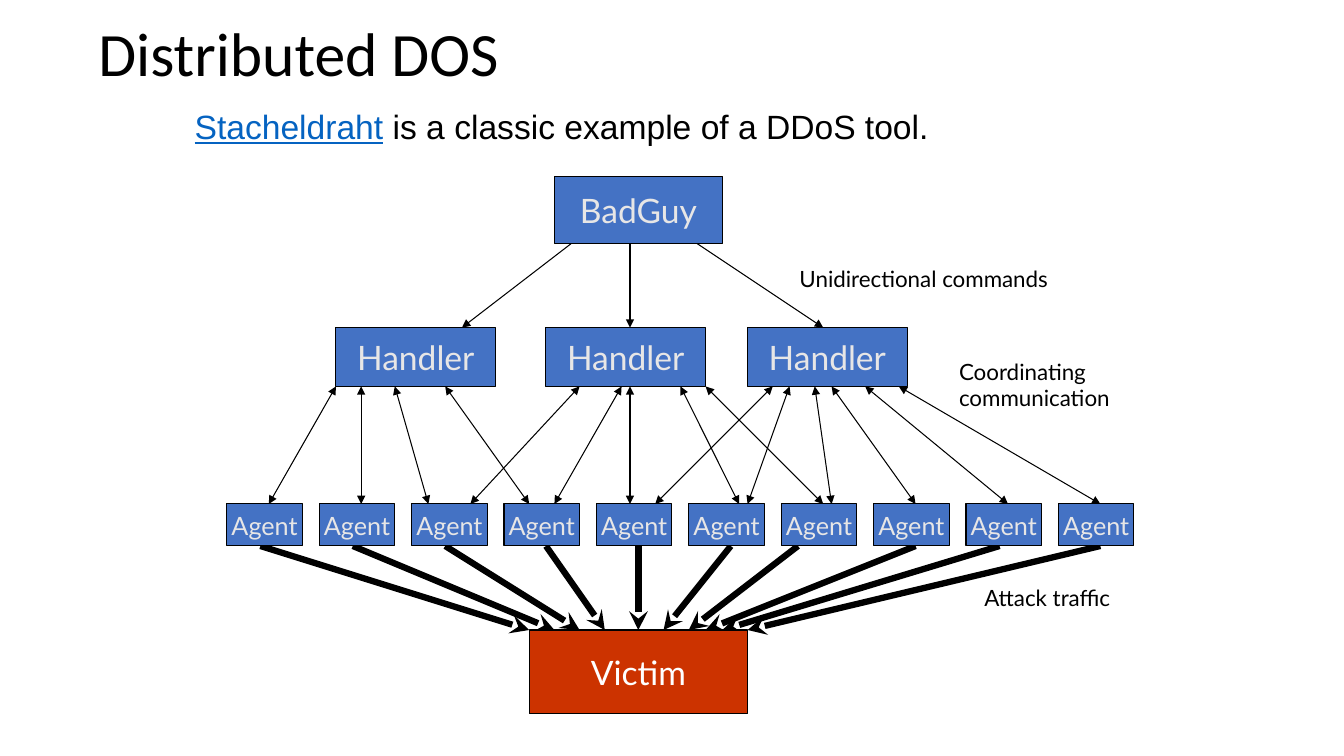
from lxml import etree
from pptx import Presentation
from pptx.dml.color import RGBColor
from pptx.enum.shapes import MSO_CONNECTOR, MSO_SHAPE
from pptx.enum.text import MSO_ANCHOR as ANCHOR, PP_ALIGN as ALIGN
from pptx.oxml.ns import qn
from pptx.util import Cm, Pt

COLORS = {"black": "000000", "blue": "4472C4", "red": "CC3300",
          "pale": "E7E6E6", "white": "FFFFFF", "link": "0563C1"}

# Grid positions
BADGUY = (66, 21, 20, 8)
VICTIM = (63, 75, 26, 10)
HANDLER_LEFTS, HANDLER_TOP, HANDLER_W, HANDLER_H = (40, 65, 89), 39, 19, 7
AGENT_LEFT, AGENT_STEP, AGENT_TOP, AGENT_W, AGENT_H = 27, 11, 60, 9, 5
AGENT_COUNT = 10

# (x at the upper row, x at the lower row)
COMMANDS = [(68, 55), (75, 75), (83, 98)]
COORDINATION = [(40, 32), (43, 43), (47, 51), (53, 63), (69, 56),
                (74, 66), (75, 75), (81, 88), (84, 98), (92, 78),
                (94, 89), (97, 99), (99, 109), (103, 120), (107, 131)]
ATTACKS = [(31, 63), (42, 66), (53, 69), (65, 72), (76, 76),
           (87, 79), (95, 82), (109, 84), (119, 86), (131, 89)]
LABELS = [("Unidirectional commands", (94, 31, 37, 4.4)),
          ("Coordinating communication", (113, 42, 25, 7.7)),
          ("Attack traffic", (116, 69, 19, 4.4))]


def grid(n):
    """Length of n grid steps, twelve to the inch."""
    return Cm(n * 2.54 / 12)


def rgb(name):
    return RGBColor.from_string(COLORS[name])


def add_run(p, text, size, font, color, underline=None):
    r = p.add_run()
    r.text = text
    r.font.size = Pt(size)
    r.font.name = font
    r.font.color.rgb = rgb(color)
    r.font.underline = underline


def add_title(s, text):
    sp = s.shapes.title
    sp.left, sp.top, sp.width, sp.height = map(grid, (10.5, 1.5, 108, 10.5))
    tf = sp.text_frame
    tf.vertical_anchor = ANCHOR.MIDDLE
    p = tf.paragraphs[0]
    p.alignment = ALIGN.LEFT
    p.line_spacing = 0.9
    add_run(p, text, 44, "Calibri", "black")


def add_text(s, box):
    """Add a wrapping text box and return its first paragraph."""
    tf = s.shapes.add_textbox(*map(grid, box)).text_frame
    tf.word_wrap = True
    return tf.paragraphs[0]


def add_node(s, text, box, size=24, fill="blue", color="pale"):
    sp = s.shapes.add_shape(MSO_SHAPE.RECTANGLE, *map(grid, box))
    sp.shadow.inherit = False
    sp.fill.solid()
    sp.fill.fore_color.rgb = rgb(fill)
    sp.line.color.rgb = rgb("black")
    sp.line.width = Pt(0.75)
    tf = sp.text_frame
    tf.word_wrap = False
    tf.vertical_anchor = ANCHOR.MIDDLE
    p = tf.paragraphs[0]
    p.alignment = ALIGN.CENTER
    add_run(p, text, size, "Lato", color)


def add_arrows(s, links, top, bottom, width=0.75, head=None, tail="triangle"):
    """Draw one arrow per link, from the row at top to the row at bottom."""
    for x1, x2 in links:
        c = s.shapes.add_connector(MSO_CONNECTOR.STRAIGHT,
                                   *map(grid, (x1, top, x2, bottom)))
        c.line.color.rgb = rgb("black")
        c.line.width = Pt(width)
        ln = c.line._get_or_add_ln()
        for tag, kind in (("a:headEnd", head), ("a:tailEnd", tail)):
            if kind:
                etree.SubElement(ln, qn(tag), type=kind)
        etree.SubElement(c._element.spPr, qn("a:effectLst"))


def main():
    prs = Presentation()
    prs.slide_width, prs.slide_height = grid(160), grid(90)
    s = prs.slides.add_slide(prs.slide_layouts[5])

    add_title(s, "Distributed DOS")
    p = add_text(s, (22, 12, 96, 6.1))
    add_run(p, "Stacheldraht", 24, "Arial", "link", underline=True)
    add_run(p, " is a classic example of a DDoS tool.", 24, "Arial", "black")

    handler_bottom = HANDLER_TOP + HANDLER_H
    add_arrows(s, ATTACKS, AGENT_TOP + AGENT_H, VICTIM[1],
               width=4.5, tail="stealth")
    add_arrows(s, COMMANDS, BADGUY[1] + BADGUY[3], HANDLER_TOP)
    add_arrows(s, COORDINATION, handler_bottom, AGENT_TOP, head="triangle")

    add_node(s, "BadGuy", BADGUY)
    for left in HANDLER_LEFTS:
        add_node(s, "Handler", (left, HANDLER_TOP, HANDLER_W, HANDLER_H))
    for i in range(AGENT_COUNT):
        left = AGENT_LEFT + i * AGENT_STEP
        add_node(s, "Agent", (left, AGENT_TOP, AGENT_W, AGENT_H), size=18)
    add_node(s, "Victim", VICTIM, fill="red", color="white")

    for text, box in LABELS:
        add_run(add_text(s, box), text, 16, "Lato", "black")

    prs.save("out.pptx")


if __name__ == "__main__":
    main()
